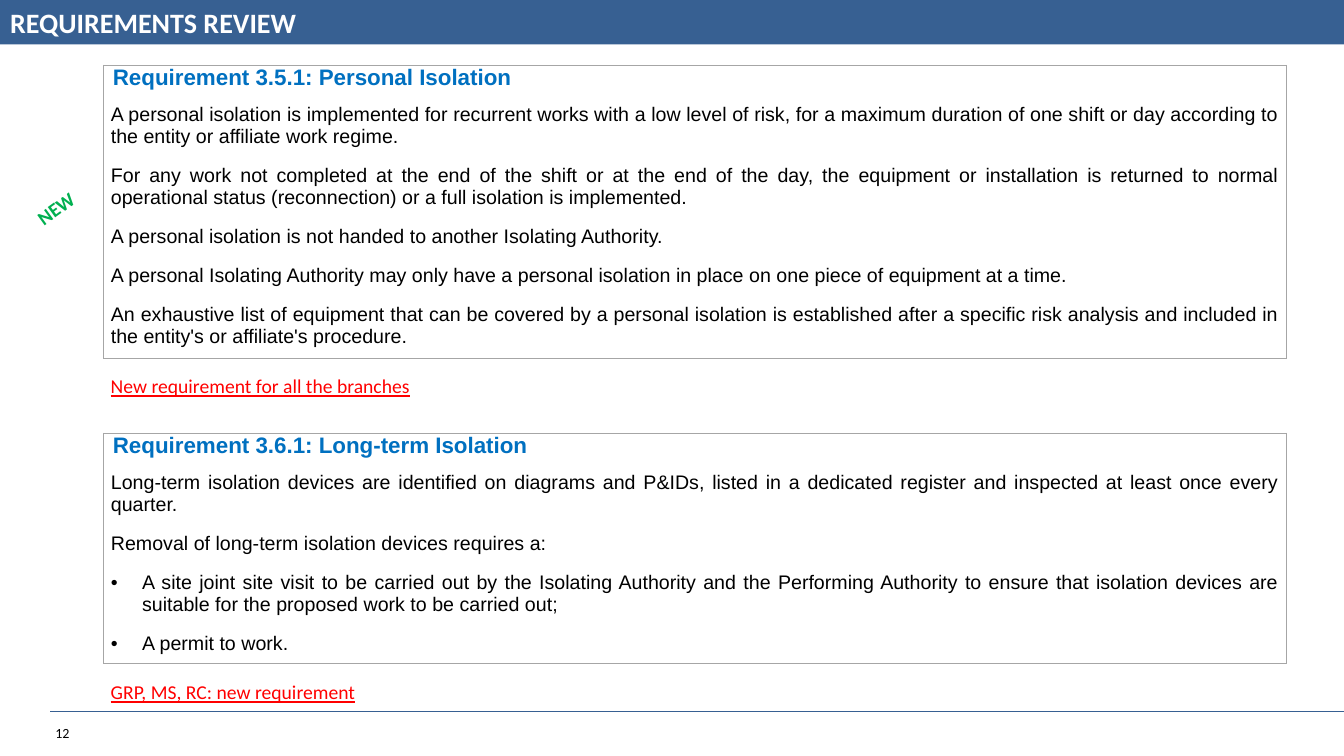
"""Build the slide that reviews two isolation requirements."""
import dataclasses

import lxml.etree
import pptx
import pptx.dml.color
import pptx.enum.shapes
import pptx.enum.text
import pptx.oxml.ns
import pptx.slide
import pptx.table
import pptx.text.text
import pptx.util

SCALE = 9144
WIDE, HIGH = 1333, 750
BAR = 44
HEAD = 38
BLUE = pptx.dml.color.RGBColor(0x37, 0x60, 0x92)
SKY = pptx.dml.color.RGBColor(0x00, 0x70, 0xC0)
GREEN = pptx.dml.color.RGBColor(0x00, 0xB0, 0x50)
RED = pptx.dml.color.RGBColor(0xFF, 0x00, 0x00)
GREY = pptx.dml.color.RGBColor(0xA6, 0xA6, 0xA6)
BLACK = pptx.dml.color.RGBColor(0x00, 0x00, 0x00)
WHITE = pptx.dml.color.RGBColor(0xFF, 0xFF, 0xFF)
ALIGN = pptx.enum.text.PP_ALIGN
qn = pptx.oxml.ns.qn


@dataclasses.dataclass(frozen=True)
class Style:
    size: int
    face: str
    tint: pptx.dml.color.RGBColor
    bold: bool = False
    under: bool = False


@dataclasses.dataclass(frozen=True)
class Label:
    text: str
    left: int
    top: int
    width: int
    height: int
    style: Style
    align: ALIGN = ALIGN.LEFT
    turn: float = 0
    wrap: bool = True


@dataclasses.dataclass(frozen=True)
class Item:
    text: str
    dot: bool = False


@dataclasses.dataclass(frozen=True)
class Panel:
    head: str
    top: int
    height: int
    items: tuple[Item, ...]


TITLE = Style(20, "Calibri", WHITE, bold=True)
TOPIC = Style(16, "Arial", SKY, bold=True)
BODY = Style(14, "Arial", BLACK)
NOTE = Style(14, "Calibri", RED, under=True)

PANELS = (
    Panel("Requirement 3.5.1: Personal Isolation", 65, 291, (
        Item("A personal isolation is implemented for recurrent works with a low level of risk, "
             "for a maximum duration of one shift or day according to the entity or affiliate "
             "work regime."),
        Item("For any work not completed at the end of the shift or at the end of the day, the "
             "equipment or installation is returned to normal operational status (reconnection) "
             "or a full isolation is implemented."),
        Item("A personal isolation is not handed to another Isolating Authority."),
        Item("A personal Isolating Authority may only have a personal isolation in place on one "
             "piece of equipment at a time."),
        Item("An exhaustive list of equipment that can be covered by a personal isolation is "
             "established after a specific risk analysis and included in the entity's or "
             "affiliate's procedure."),
    )),
    Panel("Requirement 3.6.1: Long-term Isolation", 430, 228, (
        Item("Long-term isolation devices are identified on diagrams and P&IDs, listed in a "
             "dedicated register and inspected at least once every quarter."),
        Item("Removal of long-term isolation devices requires a:"),
        Item("A site joint site visit to be carried out by the Isolating Authority and the "
             "Performing Authority to ensure that isolation devices are suitable for the "
             "proposed work to be carried out;", dot=True),
        Item("A permit to work.", dot=True),
    )),
)

LABELS = (
    Label("12", 45, 714, 71, 27, Style(10, "Calibri", BLACK)),
    Label("NEW", 25, 188, 66, 34, Style(14, "Calibri", GREEN, bold=True), turn=324.1, wrap=False),
    Label("New requirement for all the branches", 100, 366, 1173, 34, NOTE, ALIGN.JUSTIFY),
    Label("GRP, MS, RC: new requirement", 100, 670, 1173, 34, NOTE, ALIGN.JUSTIFY),
)


def px(count: int) -> pptx.util.Emu:
    return pptx.util.Emu(count * SCALE)


def write(para: pptx.text.text._Paragraph, text: str, style: Style, align: ALIGN) -> None:
    para.alignment = align
    run = para.add_run()
    run.text = text
    font = run.font
    font.size = pptx.util.Pt(style.size)
    font.name = style.face
    font.color.rgb = style.tint
    font.bold = style.bold
    font.underline = style.under


def draw_frame(slide: pptx.slide.Slide) -> None:
    shapes = slide.shapes
    bar = shapes.add_shape(pptx.enum.shapes.MSO_SHAPE.RECTANGLE, 0, 0, px(WIDE), px(BAR))
    bar.shadow.inherit = False
    bar.fill.solid()
    bar.fill.fore_color.rgb = BLUE
    bar.line.fill.background()
    rule = shapes.add_connector(
        pptx.enum.shapes.MSO_CONNECTOR.STRAIGHT, px(50), px(706), px(WIDE), px(706))
    rule.line.color.rgb = BLUE
    rule.line.width = pptx.util.Pt(0.75)
    lxml.etree.SubElement(rule._element.spPr, qn("a:effectLst"))

    title = shapes.title
    title.left, title.top, title.width, title.height = 0, 0, px(690), px(BAR)
    frame = title.text_frame
    frame.vertical_anchor = pptx.enum.text.MSO_ANCHOR.MIDDLE
    frame.auto_size = pptx.enum.text.MSO_AUTO_SIZE.NONE
    write(frame.paragraphs[0], "REQUIREMENTS REVIEW", TITLE, ALIGN.LEFT)
    title._element.addprevious(bar._element)


def draw_label(slide: pptx.slide.Slide, label: Label) -> None:
    box = slide.shapes.add_textbox(
        px(label.left), px(label.top), px(label.width), px(label.height))
    box.rotation = label.turn
    frame = box.text_frame
    frame.word_wrap = label.wrap
    frame.auto_size = pptx.enum.text.MSO_AUTO_SIZE.SHAPE_TO_FIT_TEXT
    write(frame.paragraphs[0], label.text, label.style, label.align)


def dress_cell(cell: pptx.table._Cell, left: int, sides: str) -> None:
    cell.margin_left, cell.margin_right = px(left), px(7)
    cell.margin_top = cell.margin_bottom = 0
    props = cell._tc.get_or_add_tcPr()
    for side in "LRTB":
        line = lxml.etree.SubElement(props, qn(f"a:ln{side}"), w=str(pptx.util.Pt(1)))
        if side in sides:
            fill = lxml.etree.SubElement(line, qn("a:solidFill"))
            lxml.etree.SubElement(fill, qn("a:srgbClr"), val=str(GREY))
        else:
            lxml.etree.SubElement(line, qn("a:noFill"))
    cell.fill.background()


def add_dot(para: pptx.text.text._Paragraph) -> None:
    props = para._p.get_or_add_pPr()
    props.set("marL", str(px(31)))
    props.set("indent", str(px(-31)))
    lxml.etree.SubElement(props, qn("a:buFont"), typeface="Arial")
    lxml.etree.SubElement(props, qn("a:buChar"), char="•")


def draw_panel(slide: pptx.slide.Slide, panel: Panel) -> None:
    table = slide.shapes.add_table(
        2, 1, px(103), px(panel.top), px(1173), px(panel.height)).table
    table.first_row = table.horz_banding = False
    table.rows[0].height, table.rows[1].height = px(HEAD), px(panel.height - HEAD)
    head, body = table.cell(0, 0), table.cell(1, 0)
    dress_cell(head, 9, "LRT")
    dress_cell(body, 7, "LRB")
    first = head.text_frame.paragraphs[0]
    first.space_after = pptx.util.Pt(6)
    write(first, panel.head, TOPIC, ALIGN.JUSTIFY)
    frame = body.text_frame
    for place, item in enumerate(panel.items):
        para = frame.add_paragraph() if place else frame.paragraphs[0]
        if item.dot:
            add_dot(para)
        para.space_before = pptx.util.Pt(6 if place else 0)
        para.space_after = pptx.util.Pt(6)
        write(para, item.text, BODY, ALIGN.JUSTIFY)


def main() -> None:
    deck = pptx.Presentation()
    deck.slide_width, deck.slide_height = px(WIDE), px(HIGH)
    slide = deck.slides.add_slide(deck.slide_layouts.get_by_name("Title Only"))
    draw_frame(slide)
    for panel in PANELS:
        draw_panel(slide, panel)
    for label in LABELS:
        draw_label(slide, label)
    deck.save("out.pptx")


if __name__ == "__main__":
    main()
